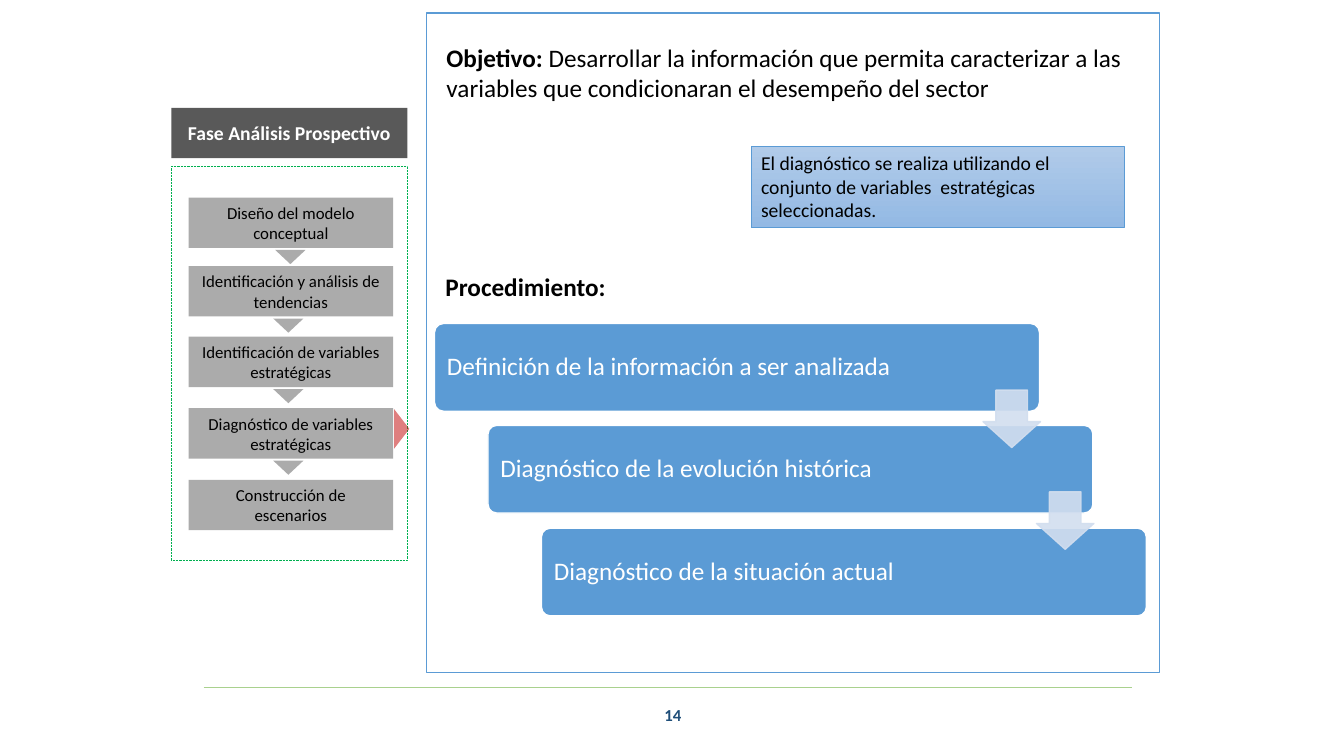
from lxml import etree
from pptx import Presentation, util as u
from pptx.dml.color import RGBColor
from pptx.enum import dml, shapes, text
from pptx.oxml import ns

PX = 9144  # 100 px to the inch
HUES = {
    "white": "FFFFFF", "black": "000000", "gray": "595959", "navy": "1F4E79",
    "blue": "5B9BD5", "pale": "D2DEEF", "red": "C00000", "green": "00B050",
    "lime": "A9D18E", "light": "B1CBE9", "deep": "93B9E4",
}
KIND = shapes.MSO_SHAPE
LEFT, MID = text.PP_ALIGN.LEFT, text.PP_ALIGN.CENTER


def hue(name):
    return RGBColor.from_string(HUES[name])


def fade(fill, alpha):
    """Set the opacity, in percent, of a solid fill element."""
    etree.SubElement(fill[0], ns.qn("a:alpha"), val=str(alpha * 1000))


def write(shape, runs, size=18, color="black", align=LEFT, bold=False,
          top=False, wrap=True, grow=False, pad=(10, 5), lead=None):
    """Fill a shape with text: a string, or a list of (string, bold) pairs."""
    frame = shape.text_frame
    frame.word_wrap = wrap
    frame.auto_size = (text.MSO_AUTO_SIZE.SHAPE_TO_FIT_TEXT if grow
                       else text.MSO_AUTO_SIZE.NONE)
    frame.vertical_anchor = (text.MSO_ANCHOR.TOP if top
                             else text.MSO_ANCHOR.MIDDLE)
    frame.margin_left = frame.margin_right = pad[0] * PX
    frame.margin_top = frame.margin_bottom = pad[1] * PX
    para = frame.paragraphs[0]
    para.alignment = align
    if lead:
        para.line_spacing = lead
    for words, heavy in [(runs, bold)] if isinstance(runs, str) else runs:
        run = para.add_run()
        run.text = words
        font = run.font
        font.name, font.size, font.bold = "Calibri", u.Pt(size), heavy
        font.color.rgb = hue(color)


class Board:
    """The current slide and its way of drawing."""

    def __init__(self, deck):
        self.slide = deck.slides.add_slide(deck.slide_layouts[6])
        self.items = self.slide.shapes

    def shape(self, kind, box, fill=None, line=None, width=1, alpha=None,
              turn=0, adj=()):
        item = self.items.add_shape(kind, *(n * PX for n in box))
        item.shadow.inherit = False
        item.rotation = turn
        for i, value in enumerate(adj):
            item.adjustments[i] = value
        if fill:
            item.fill.solid()
            item.fill.fore_color.rgb = hue(fill)
        else:
            item.fill.background()
        if line:
            item.line.color.rgb = hue(line)
            item.line.width = u.Pt(width)
        else:
            item.line.fill.background()
        if alpha:
            for solid in item._element.spPr.iter(ns.qn("a:solidFill")):
                fade(solid, alpha)
        return item

    def label(self, box, runs, **style):
        item = self.items.add_textbox(*(n * PX for n in box))
        write(item, runs, **style)

    def rule(self, x, y, end, color, width):
        item = self.items.add_connector(
            shapes.MSO_CONNECTOR.STRAIGHT, x * PX, y * PX, end * PX, y * PX)
        item.line.color.rgb = hue(color)
        item.line.width = u.Pt(width)
        etree.SubElement(item._element.spPr, ns.qn("a:effectLst"))


def main():
    deck = Presentation()
    deck.slide_width, deck.slide_height = 1333 * PX, 750 * PX
    board = Board(deck)

    # Footer
    board.rule(202, 682, 1123, "lime", 1.25)
    board.label((551, 689, 233, 40), "14", size=12, color="navy",
                align=MID, bold=True)

    # Phase column
    head = board.shape(KIND.RECTANGLE, (170, 107, 234, 50), "gray")
    write(head, "Fase Análisis Prospectivo", size=14, color="white",
          align=MID, bold=True)
    frame = board.shape(KIND.RECTANGLE, (170, 165, 234, 391),
                        line="green", width=0.5)
    frame.line.dash_style = dml.MSO_LINE.ROUND_DOT

    phases = [
        (196, "Diseño del modelo conceptual"),
        (264, "Identificación y análisis de tendencias"),
        (334, "Identificación de variables estratégicas"),
        (405, "Diagnóstico de variables estratégicas"),
        (476, "Construcción de escenarios"),
    ]
    for i, (y, name) in enumerate(phases):
        cell = board.shape(KIND.RECTANGLE, (187, y, 203, 50), "gray", alpha=50)
        write(cell, name, size=12, align=MID)
        if i < len(phases) - 1:
            board.shape(KIND.ISOSCELES_TRIANGLE,
                        (271 if i else 273, y + 52, 30, 14),
                        "gray", alpha=50, turn=180)
    # Pointer from the current phase to the panel
    board.shape(KIND.ISOSCELES_TRIANGLE, (379, 418, 39, 15),
                "red", alpha=50, turn=90)

    # Main panel
    board.shape(KIND.RECTANGLE, (423, 13, 727, 654), line="blue")

    # Staircase of steps, then the arrows over it
    steps = ["Definición de la información a ser analizada",
             "Diagnóstico de la evolución histórica",
             "Diagnóstico de la situación actual"]
    for i, name in enumerate(steps):
        step = board.shape(KIND.ROUNDED_RECTANGLE,
                           (431 + 53 * i, 321 + 203 * i // 2, 600, 87),
                           "blue", "white", adj=[0.1])
        write(step, name, color="white", pad=(10, 10), lead=0.9)
    for i in range(len(steps) - 1):
        board.shape(KIND.DOWN_ARROW, (975 + 53 * i, 387 + 101 * i, 57, 57),
                    "pale", "pale", alpha=90, adj=[0.55, 0.45])

    # Headings
    board.label((433, 37, 706, 71), [
        ("Objetivo: ", True),
        ("Desarrollar la información que permita caracterizar a las variables "
         "que condicionaran el desempeño del sector", False),
    ], top=True, grow=True)
    board.label((432, 264, 186, 40), "Procedimiento:", bold=True,
                top=True, wrap=False, grow=True)

    # Shaded note
    note = board.shape(KIND.RECTANGLE, (745, 145, 370, 81),
                       line="blue", width=0.5)
    note.fill.gradient()
    note.fill.gradient_angle = 270
    for stop, name in zip(note.fill.gradient_stops, ("light", "deep")):
        stop.color.rgb = hue(name)
    write(note, "El diagnóstico se realiza utilizando el conjunto de "
          "variables  estratégicas seleccionadas.", size=14,
          top=True, grow=True)

    deck.save("out.pptx")


if __name__ == "__main__":
    main()
